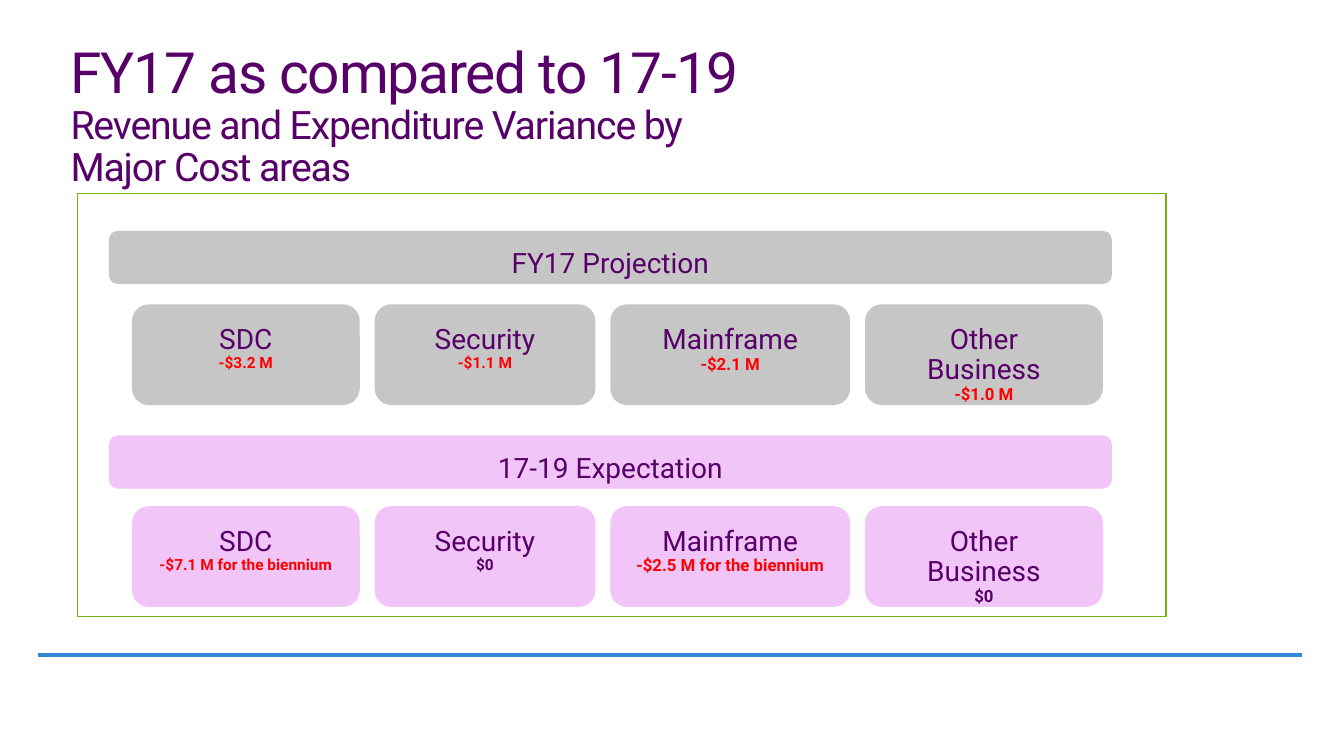
from lxml.etree import SubElement
from pptx import Presentation
from pptx.dml.color import RGBColor
from pptx.enum.shapes import MSO_CONNECTOR, MSO_SHAPE
from pptx.enum.text import MSO_ANCHOR, PP_ALIGN
from pptx.oxml.ns import qn
from pptx.util import Pt

PURPLE, RED, BLUE, GREEN = "580069", "FF0000", "3388D5", "73AE14"
WHITE, GREY, LILAC = "FFFFFF", "C6C6C7", "F1C5F8"

AREA_LEFT, AREA_GAP, AREA_HEIGHT = 94.3, 10.6, 72
# Name, box width and amount size of each cost area
AREAS = [("SDC", 162.7, 11), ("Security", 157.7, 11),
         ("Mainframe", 171.4, 12), ("Other Business", 169.9, 12)]

# Heading, fill, bar top, boxes top and amounts of each period
PERIODS = [
    ("FY17 Projection", GREY, 164.9, 217.4,
     ["-$3.2 M", "-$1.1 M", "-$2.1 M", "-$1.0 M"]),
    ("17-19 Expectation", LILAC, 311, 361.6,
     ["-$7.1 M for the biennium", "$0", "-$2.5 M for the biennium", "$0"]),
]


def rgb(color):
    return RGBColor.from_string(color)


def write(para, text, size=20, color=PURPLE, bold=False, spacing=0):
    """Append text to a paragraph; each newline becomes a line break."""
    para.line_spacing = 0.9
    for index, line in enumerate(text.split("\n")):
        if index:
            para.add_line_break()
        if not line:
            continue
        span = para.add_run()
        span.text = line
        span.font.name = "Roboto"
        span.font.size = Pt(size)
        span.font.bold = bold
        span.font.color.rgb = rgb(color)
        if spacing:
            span.font._element.set("spc", str(round(spacing * 100)))


def set_frame(box, side, top):
    frame = box.text_frame
    frame.word_wrap = True
    frame.vertical_anchor = MSO_ANCHOR.TOP
    frame.margin_left = frame.margin_right = Pt(side)
    frame.margin_top = frame.margin_bottom = Pt(top)
    return frame


def add_box(page, kind, left, top, width, height, fill, outline=None):
    box = page.shapes.add_shape(kind, Pt(left), Pt(top), Pt(width), Pt(height))
    box.shadow.inherit = False
    box.fill.solid()
    box.fill.fore_color.rgb = rgb(fill)
    if outline:
        box.line.color.rgb = rgb(outline)
        box.line.width = Pt(0.85)
    else:
        box.line.fill.background()
    return box


def add_card(page, left, top, width, height, fill, heading, amount=None, size=12):
    box = add_box(page, MSO_SHAPE.ROUNDED_RECTANGLE, left, top, width, height, fill)
    frame = set_frame(box, 14.4, 11.5)
    para = frame.paragraphs[0]
    para.alignment = PP_ALIGN.CENTER
    write(para, heading)
    if amount:
        para = frame.add_paragraph()
        para.alignment = PP_ALIGN.CENTER
        color = RED if amount.startswith("-") else PURPLE
        write(para, amount, size=size, color=color, bold=True)


def add_period(page, heading, fill, bar_top, boxes_top, amounts):
    add_card(page, 77.8, bar_top, 716.4, 38, fill, heading)
    left = AREA_LEFT
    for (name, width, size), amount in zip(AREAS, amounts):
        add_card(page, left, boxes_top, width, AREA_HEIGHT, fill, name, amount, size)
        left += width + AREA_GAP


def add_title(page):
    box = page.shapes.add_textbox(Pt(40.3), Pt(26.6), Pt(594.7), Pt(70.6))
    para = set_frame(box, 10.1, 5).paragraphs[0]
    write(para, "FY17 as compared to 17-19\n", size=40.6, spacing=-0.8)
    write(para, "Revenue and Expenditure Variance by\nMajor Cost areas",
          size=28, spacing=-0.8)


def add_rule(page):
    rule = page.shapes.add_connector(
        MSO_CONNECTOR.STRAIGHT, Pt(27.4), Pt(468), Pt(930.2), Pt(468))
    rule.line.color.rgb = rgb(BLUE)
    rule.line.width = Pt(3)
    SubElement(rule._element.spPr, qn("a:effectLst"))


def main():
    deck = Presentation()
    deck.slide_width, deck.slide_height = Pt(960), Pt(540)
    page = deck.slides.add_slide(deck.slide_layouts[6])
    add_rule(page)
    add_title(page)
    add_box(page, MSO_SHAPE.RECTANGLE, 55.4, 138.2, 777.6, 302.4, WHITE, GREEN)
    for period in PERIODS:
        add_period(page, *period)
    deck.save("out.pptx")


if __name__ == "__main__":
    main()
